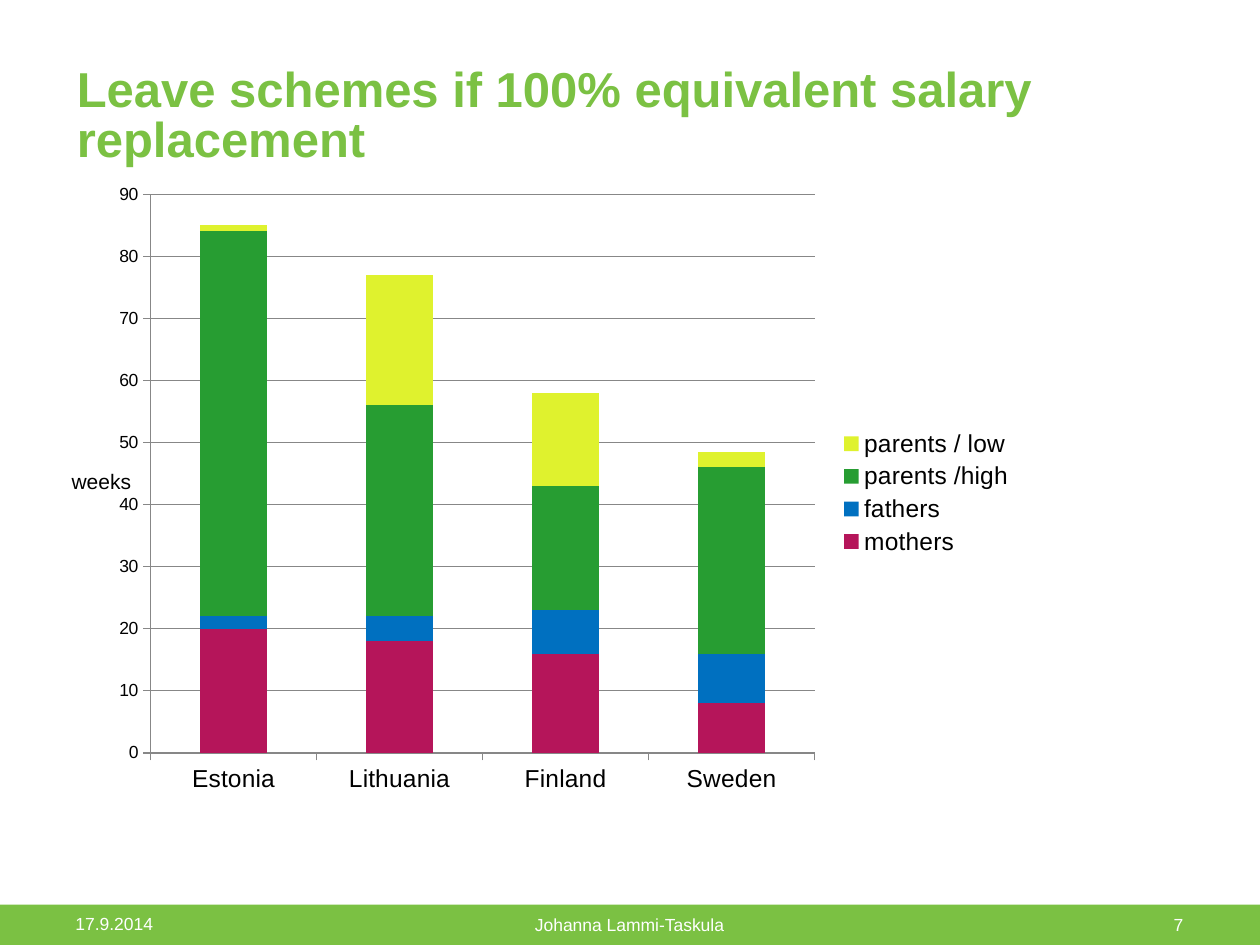
from dataclasses import dataclass

from lxml import etree
from pptx import Presentation
from pptx.chart.data import CategoryChartData
from pptx.dml.color import RGBColor
from pptx.enum.chart import XL_CHART_TYPE, XL_LEGEND_POSITION, XL_TICK_MARK
from pptx.enum.shapes import MSO_SHAPE
from pptx.enum.text import MSO_ANCHOR, MSO_AUTO_SIZE, PP_ALIGN
from pptx.oxml.ns import qn
from pptx.util import Inches, Pt

STACKED = XL_CHART_TYPE.COLUMN_STACKED
LEGEND_RIGHT = XL_LEGEND_POSITION.RIGHT
TICK_OUTSIDE = XL_TICK_MARK.OUTSIDE
LEFT, CENTER, RIGHT = PP_ALIGN.LEFT, PP_ALIGN.CENTER, PP_ALIGN.RIGHT
TOP, MIDDLE, BOTTOM = MSO_ANCHOR.TOP, MSO_ANCHOR.MIDDLE, MSO_ANCHOR.BOTTOM


@dataclass(frozen=True)
class Theme:
    font: str = "Arial"
    green: RGBColor = RGBColor(0x7B, 0xC1, 0x43)
    white: RGBColor = RGBColor(0xFF, 0xFF, 0xFF)
    black: RGBColor = RGBColor(0x00, 0x00, 0x00)
    grid: RGBColor = RGBColor(0x87, 0x87, 0x87)
    title_size: int = 28
    label_size: int = 14
    unit_size: int = 12
    small_size: int = 10


THEME = Theme()


@dataclass(frozen=True)
class Box:
    left: float
    top: float
    width: float
    height: float

    def lengths(self) -> tuple:
        return tuple(Inches(n) for n in (self.left, self.top, self.width, self.height))


@dataclass(frozen=True)
class Label:
    text: str
    box: Box
    size: int
    color: RGBColor
    alignment: PP_ALIGN = LEFT
    anchor: MSO_ANCHOR = MIDDLE


@dataclass(frozen=True)
class LeaveSeries:
    name: str
    weeks: tuple
    color: RGBColor


COUNTRIES = ("Estonia", "Lithuania", "Finland", "Sweden")
SERIES = (
    LeaveSeries("mothers", (20, 18, 16, 8), RGBColor(0xB5, 0x15, 0x5A)),
    LeaveSeries("fathers", (2, 4, 7, 8), RGBColor(0x00, 0x70, 0xC0)),
    LeaveSeries("parents /high", (62, 34, 20, 30), RGBColor(0x27, 0x9D, 0x32)),
    LeaveSeries("parents / low", (1, 21, 15, 2.5), RGBColor(0xDF, 0xF2, 0x2E)),
)
LABELS = (
    Label("17.9.2014", Box(0.5, 7.21, 1.19, 0.24), THEME.small_size, THEME.white),
    Label("Johanna Lammi-Taskula", Box(1.69, 7.22, 6.61, 0.24),
          THEME.small_size, THEME.white, CENTER),
    Label("7", Box(8.31, 7.22, 1.18, 0.24), THEME.small_size, THEME.white, RIGHT),
    Label("weeks", Box(0.47, 3.67, 0.71, 0.3), THEME.unit_size, THEME.black, anchor=TOP),
)
CHART_BOX = Box(0.83, 1.39, 7.32, 5.04)
PLOT_SHARE = {"x": 0.05, "y": 0.03, "w": 0.72, "h": 0.88}


def style_font(font, size: int, color: RGBColor, bold: bool = False) -> None:
    font.name = THEME.font
    font.size = Pt(size)
    font.color.rgb = color
    font.bold = bold


def add_footer_band(slide) -> None:
    band = slide.shapes.add_shape(MSO_SHAPE.RECTANGLE, *Box(0, 7.18, 10, 0.32).lengths())
    band.shadow.inherit = False
    band.fill.solid()
    band.fill.fore_color.rgb = THEME.green
    band.line.fill.background()


def set_title(slide, text: str) -> None:
    title = slide.shapes.title
    title.left, title.top, title.width, title.height = Box(0.51, 0.28, 8.98, 1.1).lengths()
    frame = title.text_frame
    frame.text = text
    frame.word_wrap = True
    frame.auto_size = MSO_AUTO_SIZE.NONE
    frame.vertical_anchor = BOTTOM
    paragraph = frame.paragraphs[0]
    paragraph.alignment = LEFT
    paragraph.line_spacing = 0.85
    style_font(paragraph.runs[0].font, THEME.title_size, THEME.green, bold=True)


def add_label(slide, label: Label) -> None:
    frame = slide.shapes.add_textbox(*label.box.lengths()).text_frame
    frame.text = label.text
    frame.word_wrap = True
    frame.vertical_anchor = label.anchor
    paragraph = frame.paragraphs[0]
    paragraph.alignment = label.alignment
    style_font(paragraph.runs[0].font, label.size, label.color)


def place_plot(chart) -> None:
    """Fix the inner plot area as shares of the chart's size."""
    plot_area = chart.plots[0]._element.getparent()
    for old_layout in plot_area.findall(qn("c:layout")):
        plot_area.remove(old_layout)
    layout = etree.Element(qn("c:layout"))
    manual = etree.SubElement(layout, qn("c:manualLayout"))
    settings = {"layoutTarget": "inner", "xMode": "edge", "yMode": "edge", **PLOT_SHARE}
    for name, value in settings.items():
        etree.SubElement(manual, qn(f"c:{name}")).set("val", str(value))
    plot_area.insert(0, layout)


def add_leave_chart(slide) -> None:
    data = CategoryChartData()
    data.categories = COUNTRIES
    for series in SERIES:
        data.add_series(series.name, series.weeks)
    chart = slide.shapes.add_chart(STACKED, *CHART_BOX.lengths(), data).chart
    chart.has_title = False
    style_font(chart.font, THEME.small_size, THEME.black)

    plot = chart.plots[0]
    plot.vary_by_categories = False
    plot.gap_width = 150
    plot.overlap = 100
    for drawn, series in zip(plot.series, SERIES):
        drawn.format.fill.solid()
        drawn.format.fill.fore_color.rgb = series.color

    value_axis, category_axis = chart.value_axis, chart.category_axis
    value_axis.minimum_scale, value_axis.maximum_scale = 0, 90
    value_axis.major_unit = 10
    value_axis.has_major_gridlines = True
    for axis in (value_axis, category_axis):
        axis.major_tick_mark = TICK_OUTSIDE
    style_font(category_axis.tick_labels.font, THEME.label_size, THEME.black)
    for line in (value_axis.format.line, category_axis.format.line,
                 value_axis.major_gridlines.format.line):
        line.color.rgb = THEME.grid
        line.width = Pt(0.75)

    chart.has_legend = True
    chart.legend.position = LEGEND_RIGHT
    chart.legend.include_in_layout = False
    style_font(chart.legend.font, THEME.label_size, THEME.black)
    place_plot(chart)


def main() -> None:
    presentation = Presentation()
    presentation.slide_width, presentation.slide_height = Inches(10), Inches(7.5)
    slide = presentation.slides.add_slide(presentation.slide_layouts[5])
    add_footer_band(slide)
    set_title(slide, "Leave schemes if 100% equivalent salary replacement")
    add_leave_chart(slide)
    for label in LABELS:
        add_label(slide, label)
    presentation.save("out.pptx")


if __name__ == "__main__":
    main()
